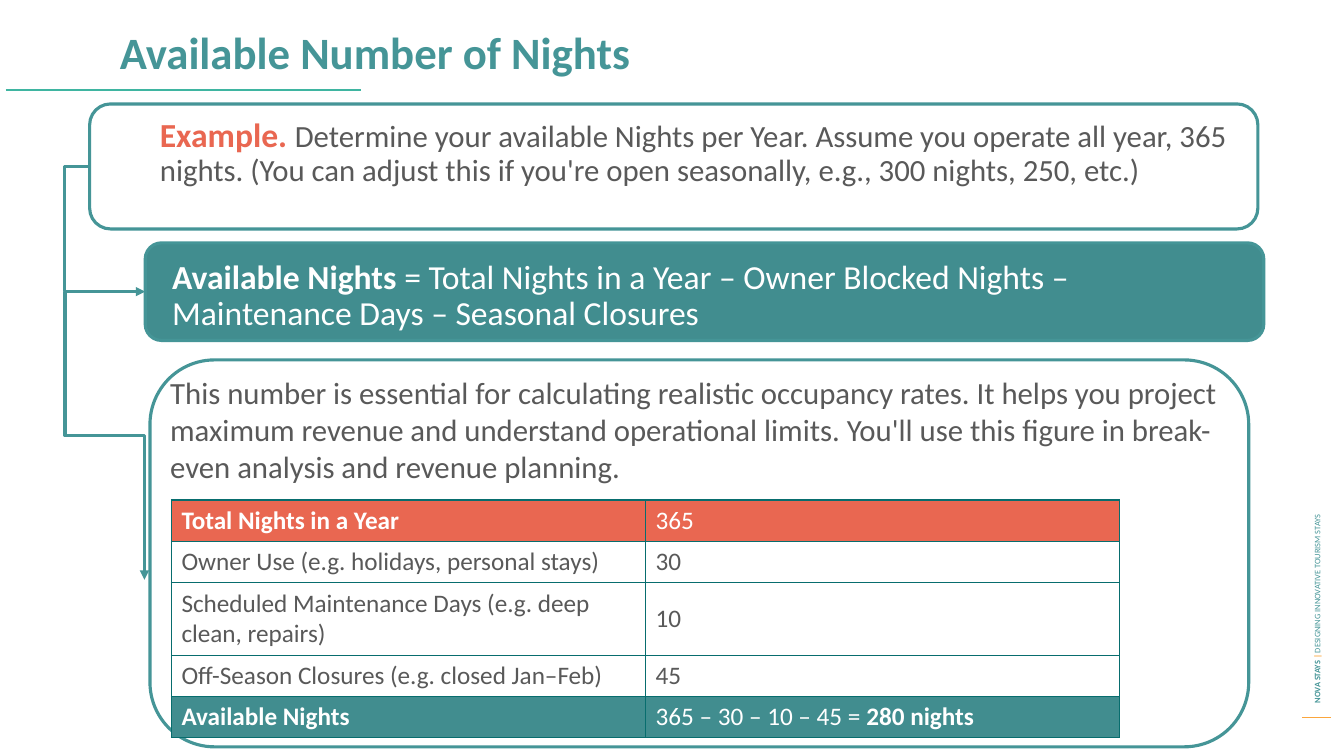
from lxml import etree
from pptx import Presentation
from pptx.dml.color import RGBColor
from pptx.enum.shapes import MSO_CONNECTOR, MSO_SHAPE
from pptx.enum.text import MSO_ANCHOR
from pptx.oxml.ns import qn
from pptx.util import Cm, Pt

ROUND = MSO_SHAPE.FLOWCHART_ALTERNATE_PROCESS
STRAIGHT, ELBOW = MSO_CONNECTOR.STRAIGHT, MSO_CONNECTOR.ELBOW
TOP, MIDDLE = MSO_ANCHOR.TOP, MSO_ANCHOR.MIDDLE
TEAL, DEEP, CORAL, GREY, WHITE = "459597", "418D8F", "E96751", "595959", "FFFFFF"


def tint(color, code):
    color.rgb = RGBColor.from_string(code)


def write(para, runs):
    for words, size, code, bold in runs:
        run = para.add_run()
        run.text = words
        run.font.name = "Calibri"
        run.font.size = Pt(size)
        run.font.bold = bold
        tint(run.font.color, code)


deck = Presentation()
deck.slide_width, deck.slide_height = Cm(33.87), Cm(19.05)
slide = deck.slides.add_slide(deck.slide_layouts[6])
shapes = slide.shapes

boxes = [
    (3.66, 6.12, 28.19, 2.46, DEEP),
    (2.26, 2.62, 29.44, 3.15, None),
    (3.78, 9.07, 27.69, 9.75, None),
]
for left, top, width, height, fill in boxes:
    box = shapes.add_shape(ROUND, Cm(left), Cm(top), Cm(width), Cm(height))
    box.shadow.inherit = False
    if fill:
        box.fill.solid()
        tint(box.fill.fore_color, fill)
    else:
        box.fill.background()
    tint(box.line.color, TEAL)
    box.line.width = Pt(2.25)

lines = [
    (STRAIGHT, 32.82, 18.08, 33.55, 18.08, "FBA63D", 0.75),
    (STRAIGHT, 0.15, 2.26, 9.09, 2.26, "3FB5A1", 1.5),
    (ELBOW, 2.26, 4.19, 3.66, 7.35, TEAL, 2.25),
    (ELBOW, 6.27, 9.98, -0.99, 11.98, TEAL, 2.25),
]
joins = []
for kind, x1, y1, x2, y2, code, weight in lines:
    join = shapes.add_connector(kind, Cm(x1), Cm(y1), Cm(x2), Cm(y2))
    tint(join.line.color, code)
    join.line.width = Pt(weight)
    props = join._element.spPr
    if kind == ELBOW:
        etree.SubElement(props.find(qn("a:ln")), qn("a:tailEnd"), type="triangle")
        joins.append(props)
    etree.SubElement(props, qn("a:effectLst"))

across, down = joins
guides = across.find(qn("a:prstGeom")).get_or_add_avLst()
etree.SubElement(guides, qn("a:gd"), name="adj1", fmla="val -45600")
down.find(qn("a:xfrm")).set("rot", "16200000")

texts = [
    (2.77, 0.64, 29.49, 2.24, 0, TOP, 0.9, [
        ("Available Number of Nights", 32, TEAL, True)]),
    (3.78, 2.87, 27.66, 2.24, 0, TOP, 0.9, [
        ("Example. ", 24, CORAL, True),
        ("Determine your available Nights per Year. Assume you operate all year, "
         "365 nights. (You can adjust this if you're open seasonally, e.g., "
         "300 nights, 250, etc.)", 22, GREY, False)]),
    (4.09, 6.35, 27.74, 2.24, 0, MIDDLE, 0.9, [
        ("Available Nights ", 24, WHITE, True),
        ("= Total Nights in a Year – Owner Blocked Nights – "
         "Maintenance Days – Seasonal Closures", 24, WHITE, False)]),
    (4.04, 9.3, 27.28, 2.24, 0, TOP, 1.0, [
        ("This number is essential for calculating realistic occupancy rates. "
         "It helps you project maximum revenue and understand operational limits. "
         "You'll use this figure in break-even analysis and revenue planning.",
         22, GREY, False)]),
    (25.86, 10.39, 14.66, 0.51, 270, MIDDLE, 1.0, [
        ("NOVA STAYS ", 6, TEAL, True),
        ("| ", 6, "FBA63B", True),
        ("DESIGNING INNOVATIVE TOURISM STAYS", 6, TEAL, False)]),
]
for left, top, width, height, turn, anchor, space, runs in texts:
    note = shapes.add_textbox(Cm(left), Cm(top), Cm(width), Cm(height))
    note.rotation = turn
    frame = note.text_frame
    frame.word_wrap = True
    frame.vertical_anchor = anchor
    para = frame.paragraphs[0]
    para.line_spacing = space
    write(para, runs)

rows = [
    (1.04, CORAL, WHITE, "Total Nights in a Year", "365", ""),
    (1.04, None, GREY, "Owner Use (e.g. holidays, personal stays)", "30", ""),
    (1.83, None, GREY, "Scheduled Maintenance Days (e.g. deep clean, repairs)", "10", ""),
    (1.04, None, GREY, "Off-Season Closures (e.g. closed Jan–Feb)", "45", ""),
    (1.04, DEEP, WHITE, "Available Nights", "365 – 30 – 10 – 45 = ", "280 nights"),
]
holder = shapes.add_table(len(rows), 2, Cm(4.32), Cm(12.6), Cm(23.9), Cm(5.99))
table = holder.table
table.first_row = table.horz_banding = False
for col in table.columns:
    col.width = Cm(11.95)
for row, (height, fill, code, label, value, total) in zip(table.rows, rows):
    row.height = Cm(height)
    sides = [[(label, 18, code, bool(fill))], [(value, 18, code, False)]]
    if total:
        sides[1].append((total, 18, code, True))
    for cell, runs in zip(row.cells, sides):
        cell.vertical_anchor = MIDDLE
        write(cell.text_frame.paragraphs[0], runs)
        props = cell._tc.get_or_add_tcPr()
        for edge in ("a:lnL", "a:lnR", "a:lnT", "a:lnB"):
            rule = etree.SubElement(props, qn(edge), w=str(Pt(1)))
            solid = etree.SubElement(rule, qn("a:solidFill"))
            etree.SubElement(solid, qn("a:srgbClr"), val="086D6E")
        if fill:
            cell.fill.solid()
            tint(cell.fill.fore_color, fill)
        else:
            cell.fill.background()

deck.save("out.pptx")
